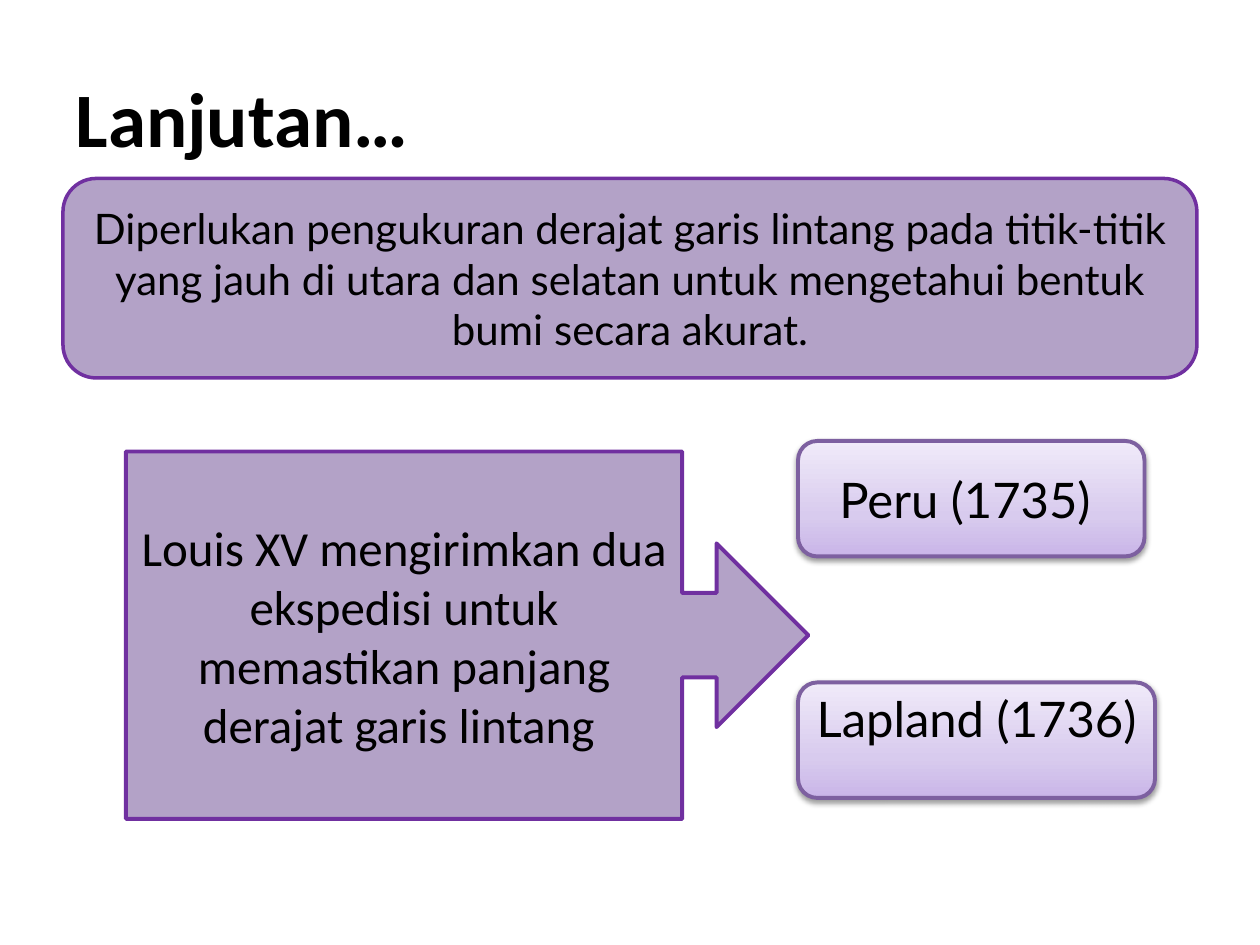
"""Build the slide about the two expeditions that measured the degree of latitude."""
from dataclasses import dataclass

from lxml import etree
from pptx import Presentation
from pptx.dml.color import RGBColor
from pptx.enum.shapes import MSO_SHAPE
from pptx.enum.text import MSO_ANCHOR, PP_ALIGN
from pptx.oxml import parse_xml
from pptx.oxml.ns import nsdecls
from pptx.util import Pt

ROUNDED = MSO_SHAPE.ROUNDED_RECTANGLE
CALLOUT = MSO_SHAPE.RIGHT_ARROW_CALLOUT
MIDDLE = MSO_ANCHOR.MIDDLE
TOP = MSO_ANCHOR.TOP
CENTER = PP_ALIGN.CENTER
LEFT = PP_ALIGN.LEFT

BLACK = RGBColor(0x00, 0x00, 0x00)
LILAC = RGBColor(0xB3, 0xA2, 0xC7)
PURPLE = RGBColor(0x70, 0x30, 0xA0)
MUTED_PURPLE = RGBColor(0x7D, 0x60, 0xA0)
GRADIENT = (
    (0, RGBColor(0xC9, 0xB5, 0xE8)),
    (35, RGBColor(0xD8, 0xCB, 0xEE)),
    (100, RGBColor(0xF0, 0xEA, 0xF9)),
)


@dataclass(frozen=True)
class Box:
    text: str
    left: float
    top: float
    width: float
    height: float
    size: float
    font: str = "Lato"
    kind: MSO_SHAPE = ROUNDED
    line_color: RGBColor = PURPLE
    line_width: float = 2.25
    adjustments: tuple[float, ...] = ()
    glossy: bool = False
    anchor: MSO_ANCHOR = MIDDLE
    margin_top: float = 3.6
    margin_side: float = 7.2


BOXES = (
    Box("Diperlukan pengukuran derajat garis lintang pada titik-titik yang jauh "
        "di utara dan selatan untuk mengetahui bentuk bumi secara akurat.",
        36, 102, 648, 114, 24, line_width=2),
    Box("Lapland (1736)", 456, 390, 204, 66, 28, line_color=MUTED_PURPLE,
        glossy=True, anchor=TOP, margin_top=0, margin_side=3.6),
    Box("Peru (1735) ", 456, 252, 198, 66, 28, line_color=MUTED_PURPLE, glossy=True),
    Box("Louis XV mengirimkan dua ekspedisi untuk memastikan panjang derajat "
        "garis lintang ",
        72, 258, 390, 210, 28, "Calibri", CALLOUT,
        adjustments=(0.23, 0.25, 0.25, 0.815)),
)


def add_run(paragraph, text: str, font: str, size: float, bold: bool = False) -> None:
    run = paragraph.add_run()
    run.text = text
    run.font.name = font
    run.font.size = Pt(size)
    run.font.bold = bold
    run.font.color.rgb = BLACK


def add_gloss(shape) -> None:
    stops = "".join(
        f'<a:gs pos="{position * 1000}"><a:srgbClr val="{color}"/></a:gs>'
        for position, color in GRADIENT
    )
    shape.fill.gradient()
    stop_list = shape.fill._fill._gradFill.gsLst
    stop_list.getparent().replace(
        stop_list, parse_xml(f'<a:gsLst {nsdecls("a")}>{stops}</a:gsLst>')
    )
    shape.fill.gradient_angle = 90
    effects = shape._element.spPr.find("{*}effectLst")
    shadow = etree.SubElement(
        effects, effects.tag.replace("effectLst", "outerShdw"),
        blurRad=str(Pt(3.1)), dist=str(Pt(1.6)), dir="5400000", rotWithShape="0",
    )
    color = etree.SubElement(
        shadow, effects.tag.replace("effectLst", "srgbClr"), val=str(BLACK)
    )
    etree.SubElement(color, effects.tag.replace("effectLst", "alpha"), val="38000")


def add_box(slide, box: Box) -> None:
    shape = slide.shapes.add_shape(
        box.kind, Pt(box.left), Pt(box.top), Pt(box.width), Pt(box.height)
    )
    for index, value in enumerate(box.adjustments):
        shape.adjustments[index] = value
    shape.line.color.rgb = box.line_color
    shape.line.width = Pt(box.line_width)
    shape.shadow.inherit = False
    if box.glossy:
        add_gloss(shape)
    else:
        shape.fill.solid()
        shape.fill.fore_color.rgb = LILAC
    frame = shape.text_frame
    frame.word_wrap = True
    frame.vertical_anchor = box.anchor
    frame.margin_top = Pt(box.margin_top)
    frame.margin_left = frame.margin_right = Pt(box.margin_side)
    paragraph = frame.paragraphs[0]
    paragraph.alignment = CENTER
    add_run(paragraph, box.text, box.font, box.size)


def set_title(slide, text: str) -> None:
    title = slide.shapes.title
    title.left, title.top = Pt(36), Pt(21.6)
    title.width, title.height = Pt(648), Pt(90)
    title.text_frame.vertical_anchor = MIDDLE
    paragraph = title.text_frame.paragraphs[0]
    paragraph.alignment = LEFT
    add_run(paragraph, text, "Calibri", 44, bold=True)


def main() -> None:
    presentation = Presentation()
    presentation.slide_width, presentation.slide_height = Pt(720), Pt(540)
    slide = presentation.slides.add_slide(presentation.slide_layouts[5])
    set_title(slide, "Lanjutan…")
    for box in BOXES:
        add_box(slide, box)
    presentation.save("out.pptx")


if __name__ == "__main__":
    main()
